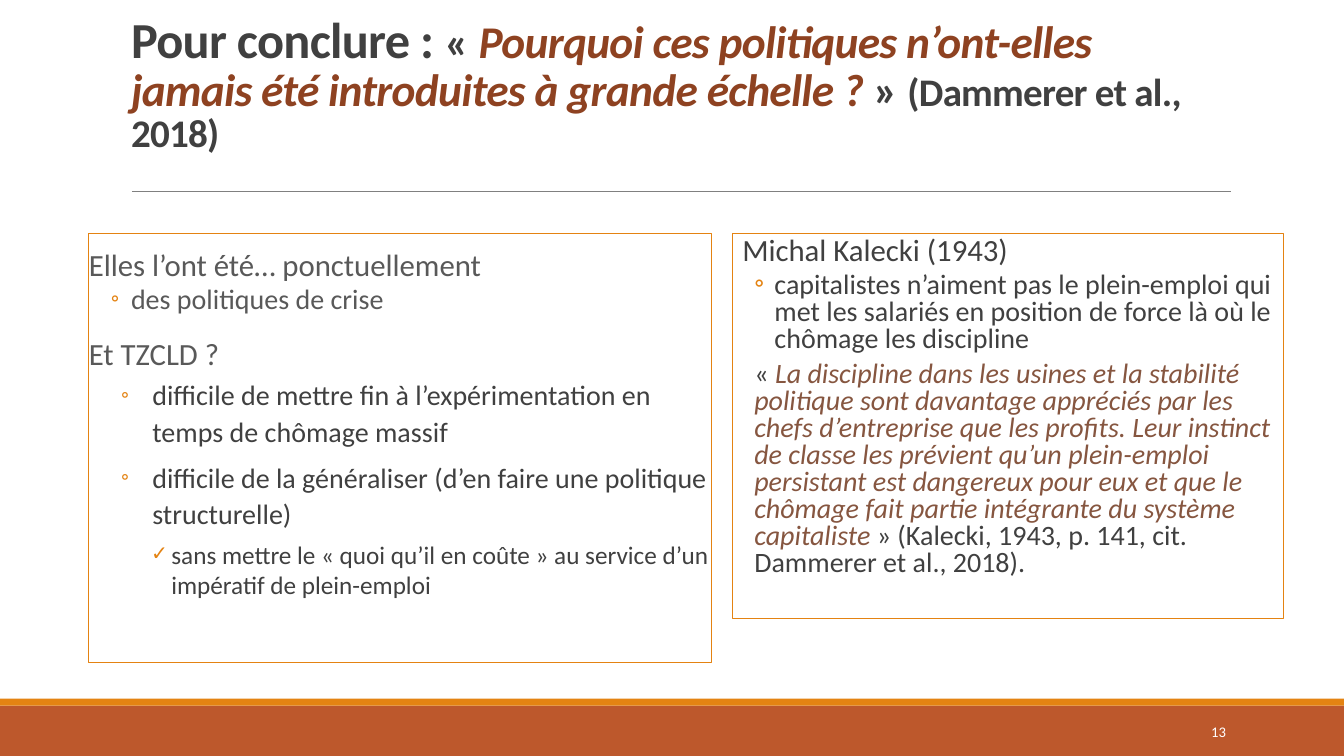
from lxml.etree import SubElement
from pptx import Presentation
from pptx.dml.color import RGBColor
from pptx.enum.shapes import MSO_CONNECTOR, MSO_SHAPE
from pptx.enum.text import MSO_ANCHOR, MSO_AUTO_SIZE, PP_ALIGN
from pptx.oxml.ns import qn
from pptx.util import Pt

FONT = "Calibri"
DARK = "404040"
GREY = "595959"
ORANGE = "E48312"
RUST = "BD582C"
WHITE = "FFFFFF"


def color(value):
    return RGBColor.from_string(value)


def add_run(paragraph, text, size, fill, bold=False, italic=False, spacing=None):
    run = paragraph.add_run()
    run.text = text
    font = run.font
    font.name, font.size = FONT, Pt(size)
    font.bold, font.italic = bold, italic
    font.color.rgb = color(fill)
    if spacing is not None:
        font._element.set("spc", str(int(spacing * 100)))


def set_bullet(paragraph, character, left, hanging, size):
    properties = paragraph._p.get_or_add_pPr()
    properties.set("marL", str(Pt(left)))
    properties.set("indent", str(-Pt(hanging)))
    if not character:
        SubElement(properties, qn("a:buNone"))
        return
    bullet_color = SubElement(properties, qn("a:buClr"))
    SubElement(bullet_color, qn("a:srgbClr")).set("val", ORANGE)
    SubElement(properties, qn("a:buSzPct")).set("val", str(size * 1000))
    SubElement(properties, qn("a:buFont")).set("typeface", FONT)
    SubElement(properties, qn("a:buChar")).set("char", character)


def prepare_frame(shape, anchor, horizontal=0):
    frame = shape.text_frame
    frame.word_wrap = True
    frame.auto_size = MSO_AUTO_SIZE.NONE
    frame.vertical_anchor = anchor
    frame.margin_left = frame.margin_right = Pt(horizontal)
    frame.margin_top = frame.margin_bottom = Pt(3.6)
    return frame


def add_rectangle(slide, left, top, width, height, fill=None, line=None):
    shape = slide.shapes.add_shape(
        MSO_SHAPE.RECTANGLE, Pt(left), Pt(top), Pt(width), Pt(height))
    shape.shadow.inherit = False
    if fill:
        shape.fill.solid()
        shape.fill.fore_color.rgb = color(fill)
    else:
        shape.fill.background()
    if line:
        shape.line.color.rgb = color(line)
        shape.line.width = Pt(0.75)
    else:
        shape.line.fill.background()
    return shape


def add_rule(slide, left, right, top):
    rule = slide.shapes.add_connector(
        MSO_CONNECTOR.STRAIGHT, Pt(left), Pt(top), Pt(right), Pt(top))
    rule.line.color.rgb = color("808080")
    rule.line.width = Pt(0.5)
    SubElement(rule._element.spPr, qn("a:effectLst"))


def fill_title(slide):
    title = slide.shapes.title
    title.left, title.top, title.width, title.height = Pt(86.4), Pt(31.7), Pt(792), Pt(82.8)
    paragraph = prepare_frame(title, MSO_ANCHOR.BOTTOM, 7.2).paragraphs[0]
    paragraph.alignment = PP_ALIGN.LEFT
    paragraph.line_spacing = 0.85
    question = "Pourquoi ces politiques n’ont-elles jamais été introduites à grande échelle ? "
    for text, size, fill, italic in [
        ("Pour conclure : ", 36, DARK, False),
        ("« ", 32.4, DARK, False),
        (question, 32.4, "8E4221", True),
        ("» ", 32.4, DARK, False),
        ("(Dammerer et al., 2018)", 27.9, DARK, False),
    ]:
        add_run(paragraph, text, size, fill, True, italic, -0.5)


def add_text_panel(slide, left, top, width, height, entries):
    panel = add_rectangle(slide, left, top, width, height, line=ORANGE)
    frame = prepare_frame(panel, MSO_ANCHOR.TOP)
    for index, (style, runs) in enumerate(entries):
        character, indent, hanging, bullet_size, spacing, before, after, size = style
        paragraph = frame.add_paragraph() if index else frame.paragraphs[0]
        paragraph.alignment = PP_ALIGN.LEFT
        paragraph.line_spacing = spacing
        paragraph.space_before, paragraph.space_after = Pt(before), Pt(after)
        set_bullet(paragraph, character, indent, hanging, bullet_size)
        for text, fill, italic in runs:
            add_run(paragraph, text, size, fill, italic=italic)


def add_page_number(slide, number):
    box = slide.shapes.add_textbox(Pt(779.8), Pt(508.3), Pt(103), Pt(28.8))
    paragraph = prepare_frame(box, MSO_ANCHOR.MIDDLE, 7.2).paragraphs[0]
    paragraph.alignment = PP_ALIGN.RIGHT
    add_run(paragraph, number, 10.5, WHITE)


def main():
    presentation = Presentation()
    presentation.slide_width, presentation.slide_height = Pt(960), Pt(540)
    slide = presentation.slides.add_slide(presentation.slide_layouts[5])

    add_rectangle(slide, 0, 504, 960, 36, fill=RUST)
    add_rectangle(slide, 0, 499, 960, 5, fill=ORANGE)
    add_rule(slide, 94.3, 879, 136.8)
    fill_title(slide)

    heading = ("", 0, 0, 100, 1.2, 4.4, 0, 22)
    crisis = ("◦", 30.2, 14.4, 85, 0.9, 2, 4, 20)
    difficulty = ("◦", 45.4, 22.3, 80, 1.1, 2, 4, 20)
    check = ("✓", 59, 14.4, 80, 1, 2, 4, 18)
    add_text_panel(slide, 63.4, 166.5, 445, 306.5, [
        (heading, [("Elles l’ont été… ponctuellement", GREY, False)]),
        (crisis, [("des politiques de crise", GREY, False)]),
        (heading, [("Et TZCLD ?", GREY, False)]),
        (difficulty, [("difficile de mettre fin à l’expérimentation en temps de "
                       "chômage massif", DARK, False)]),
        (difficulty, [("difficile de la généraliser (d’en faire une politique "
                       "structurelle)", DARK, False)]),
        (check, [("sans mettre le « quoi qu’il en coûte » au service d’un "
                  "impératif de plein-emploi", DARK, False)]),
    ])

    author = ("", 7.2, 0, 100, 0.8, 12, 2, 22)
    argument = ("◦", 30.2, 14.4, 100, 0.8, 2, 4, 20)
    quotation = ("", 15.8, 0, 100, 0.8, 2, 4, 20)
    add_text_panel(slide, 523, 166.5, 394, 275, [
        (author, [("Michal Kalecki (1943)", DARK, False)]),
        (argument, [("capitalistes n’aiment pas le plein-emploi qui met les salariés "
                     "en position de force là où le chômage les discipline", DARK, False)]),
        (quotation, [
            ("« ", DARK, False),
            ("La discipline dans les usines et la stabilité politique sont davantage "
             "appréciés par les chefs d’entreprise que les profits. Leur instinct de "
             "classe les prévient qu’un plein-emploi persistant est dangereux pour eux "
             "et que le chômage fait partie intégrante du système capitaliste ",
             "865640", True),
            ("» (Kalecki, 1943, p. 141, cit. Dammerer et al., 2018).", DARK, False),
        ]),
    ])
    add_page_number(slide, "13")
    presentation.save("out.pptx")


if __name__ == "__main__":
    main()
